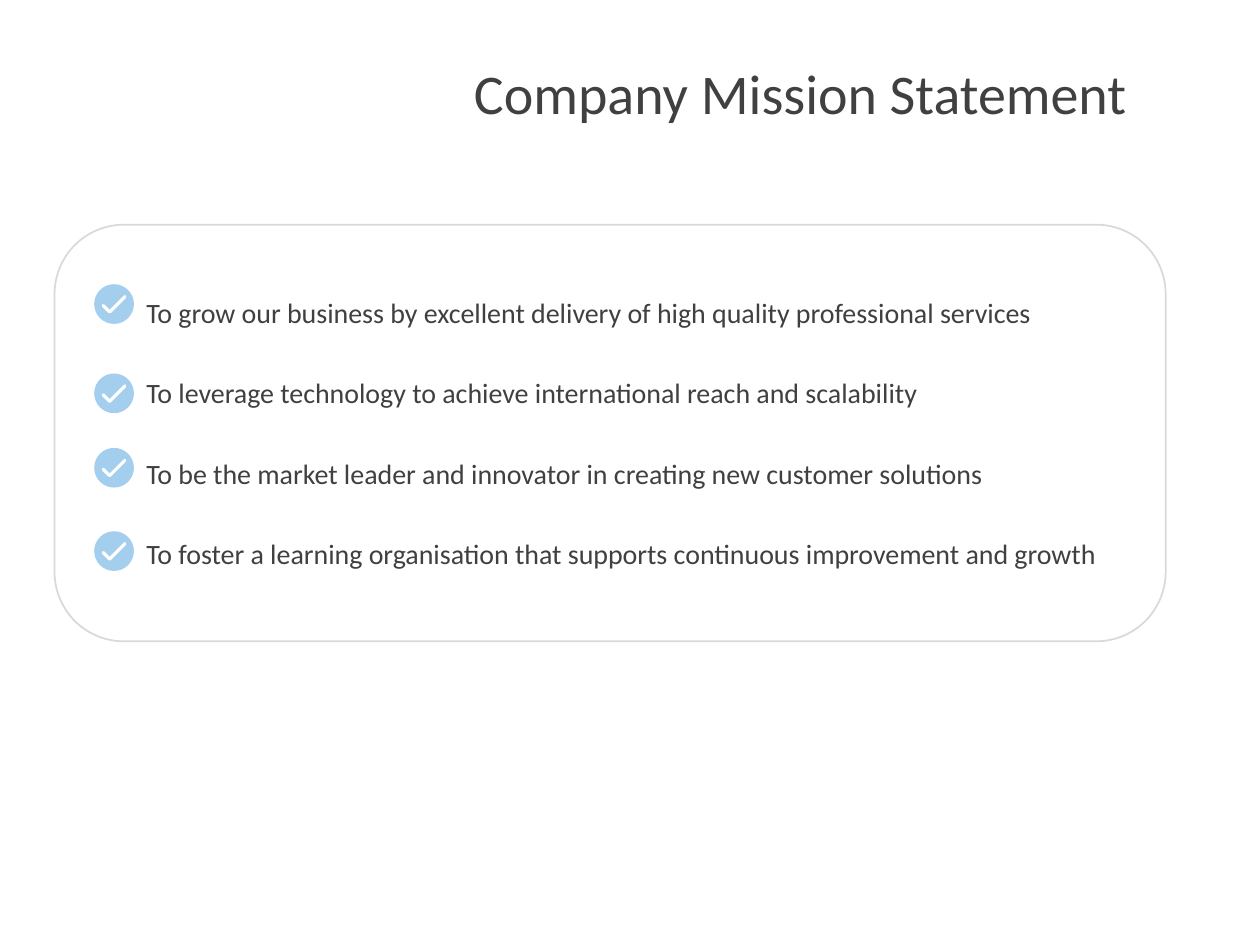
from dataclasses import dataclass

from lxml.etree import SubElement
from pptx import Presentation
from pptx.dml.color import RGBColor
from pptx.enum.shapes import MSO_SHAPE as Shape
from pptx.enum.text import MSO_ANCHOR as Anchor, MSO_AUTO_SIZE as AutoSize, PP_ALIGN as Align
from pptx.oxml.ns import qn
from pptx.util import Cm, Pt


@dataclass(frozen=True)
class Theme:
    font: str = "Calibri"
    text: RGBColor = RGBColor(0x40, 0x40, 0x40)
    panel: RGBColor = RGBColor(0xFF, 0xFF, 0xFF)
    border: RGBColor = RGBColor(0xD9, 0xD9, 0xD9)
    icon: RGBColor = RGBColor(0xA3, 0xCE, 0xED)
    title_size: Pt = Pt(32)
    body_size: Pt = Pt(16)


THEME = Theme()
TITLE = "Company Mission Statement"
# Each statement with the top of its tick, in cm below the panel's top
STATEMENTS = [
    ("To grow our business by excellent delivery of high quality professional services", 1.2),
    ("To leverage technology to achieve international reach and scalability", 3),
    ("To be the market leader and innovator in creating new customer solutions", 4.5),
    ("To foster a learning organisation that supports continuous improvement and growth", 6.18),
]


def straight(x, y):
    """A straight side, as a curve whose control points meet its end."""
    return [(x, y)] * 3


# Icon outlines in mm: a start point, then three points for each curve
DISC = [
    (4, 0),
    (1.79, 0), (0, 1.79), (0, 4),
    (0, 6.21), (1.79, 8), (4, 8),
    (6.21, 8), (8, 6.21), (8, 4),
    (8, 1.79), (6.21, 0), (4, 0),
]
TICK = [
    (6.45, 2.75),
    *straight(3.35, 5.85),
    (3.2, 6), (3, 6), (2.85, 5.85),
    *straight(1.55, 4.55),
    (1.2, 4.2), (1.7, 3.7), (2.05, 4.05),
    *straight(3.1, 5.1),
    *straight(5.95, 2.25),
    (6.3, 1.9), (6.8, 2.4), (6.45, 2.75),
]


def format_paragraph(paragraph, size, line_spacing):
    paragraph.alignment = Align.LEFT
    paragraph.line_spacing = line_spacing
    for run in paragraph.runs:
        run.font.name = THEME.font
        run.font.size = size
        run.font.color.rgb = THEME.text


def add_title(slide, left, top, width, height):
    title = slide.shapes.title
    title.left, title.top, title.width, title.height = map(Cm, (left, top, width, height))
    frame = title.text_frame
    frame.text = TITLE
    frame.vertical_anchor = Anchor.BOTTOM
    frame.auto_size = AutoSize.NONE
    format_paragraph(frame.paragraphs[0], THEME.title_size, 0.9)


def lines_to_curves(shape):
    """Turn every three line segments into one cubic curve."""
    segments = list(shape.element.iter(qn("a:lnTo")))
    for first, second, third in zip(*[iter(segments)] * 3):
        curve = SubElement(first.getparent(), qn("a:cubicBezTo"))
        first.addprevious(curve)
        for segment in (first, second, third):
            curve.append(segment[0])
            segment.getparent().remove(segment)


def add_tick(slide, left, top):
    """A disc with a rounded tick cut out of it."""
    disc, tick = (
        [(Cm(left + x / 10), Cm(top + y / 10)) for x, y in outline]
        for outline in (DISC, TICK)
    )
    builder = slide.shapes.build_freeform(*disc[0])
    builder.add_line_segments(disc[1:])
    builder.move_to(*tick[0])
    builder.add_line_segments(tick[1:])
    shape = builder.convert_to_shape()
    lines_to_curves(shape)
    shape.shadow.inherit = False
    shape.fill.solid()
    shape.fill.fore_color.rgb = THEME.icon
    shape.line.fill.background()


def add_mission_panel(slide, left, top, width, height):
    # Rounded frame
    panel = slide.shapes.add_shape(
        Shape.ROUNDED_RECTANGLE, Cm(left), Cm(top), Cm(width), Cm(height))
    panel.shadow.inherit = False
    panel.fill.solid()
    panel.fill.fore_color.rgb = THEME.panel
    panel.line.color.rgb = THEME.border
    panel.line.width = Pt(1)

    # Statements
    box = slide.shapes.add_textbox(Cm(left + 1.6), Cm(top + 0.63), Cm(20), Cm(5.95))
    frame = box.text_frame
    frame.word_wrap = True
    frame.text = "\n".join(text for text, _ in STATEMENTS)
    for index, paragraph in enumerate(frame.paragraphs):
        paragraph.space_before = Pt(7.5 if index else 0)
        format_paragraph(paragraph, THEME.body_size, 2.0)

    # Ticks
    for _, offset in STATEMENTS:
        add_tick(slide, left + 0.8, top + offset)


def main():
    presentation = Presentation()
    presentation.slide_width, presentation.slide_height = Cm(25.4), Cm(19.05)
    slide = presentation.slides.add_slide(presentation.slide_layouts[5])
    add_mission_panel(slide, 1.1, 4.53, 22.4, 8.4)
    add_title(slide, 9.3, -0.47, 15.04, 3.15)
    presentation.save("out.pptx")


if __name__ == "__main__":
    main()
